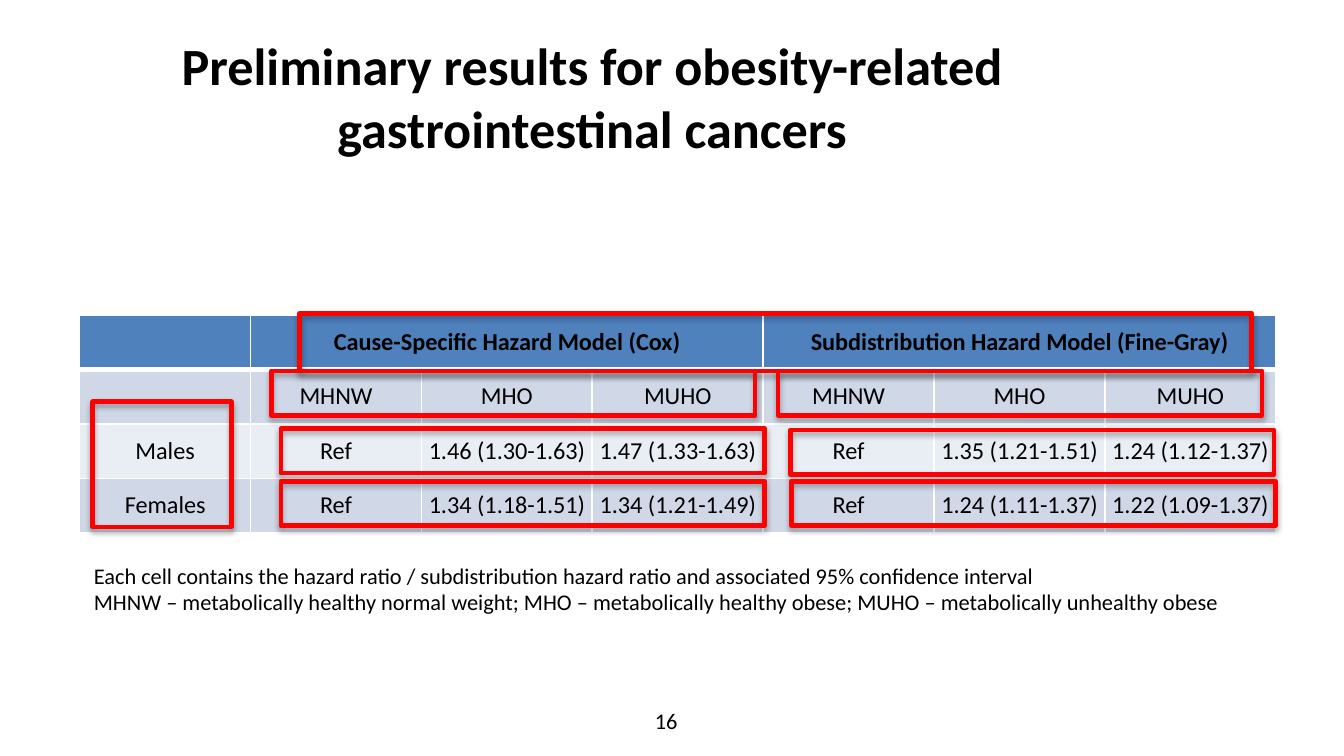
from lxml.etree import SubElement as Sub
from pptx import Presentation
from pptx.dml.color import RGBColor
from pptx.enum.shapes import MSO_SHAPE as Shape
from pptx.enum.text import MSO_ANCHOR as Anchor, MSO_AUTO_SIZE as Auto, PP_ALIGN as Align
from pptx.oxml.ns import qn
from pptx.util import Pt

HEAD = ["", "Cause-Specific Hazard Model (Cox)", "", "",
        "Subdistribution Hazard Model (Fine-Gray)", "", ""]
ROWS = [
    HEAD,
    [""] + ["MHNW", "MHO", "MUHO"] * 2,
    ["Males", "Ref", "1.46 (1.30-1.63)", "1.47 (1.33-1.63)",
     "Ref", "1.35 (1.21-1.51)", "1.24 (1.12-1.37)"],
    ["Females", "Ref", "1.34 (1.18-1.51)", "1.34 (1.21-1.49)",
     "Ref", "1.24 (1.11-1.37)", "1.22 (1.09-1.37)"],
]
FILLS = ["4F81BD", "D0D8E8", "E9EDF4", "D0D8E8"]
NOTES = [
    "Each cell contains the hazard ratio / subdistribution hazard ratio "
    "and associated 95% confidence interval",
    "MHNW – metabolically healthy normal weight; MHO – metabolically healthy obese; "
    "MUHO – metabolically unhealthy obese",
]
WIDE, HIGH = 259.2, 23.8
MARKS = [(160.6, 167.8, 509.8, 31), (49.7, 215.3, 74.2, 67)] + [
    (x, y, WIDE, HIGH) for x, y in [
        (145.4, 198.7), (416.9, 198.7),
        (150.5, 229.7), (423.4, 230.4),
        (150.5, 257.8), (424.1, 257.8),
    ]
]


def color(code):
    return RGBColor.from_string(code)


class Deck:
    font = "Calibri"
    ink = "000000"
    rule = "FFFFFF"
    mark = "FF0000"

    def __init__(self, wide, high):
        self.prs = Presentation()
        self.prs.slide_width, self.prs.slide_height = Pt(wide), Pt(high)
        self.slide = self.prs.slides.add_slide(self.prs.slide_layouts[0])
        sub = self.slide.placeholders[1].element
        sub.getparent().remove(sub)

    def put(self, frame, lines, size, align, bold=False):
        for i, line in enumerate(lines):
            para = frame.add_paragraph() if i else frame.paragraphs[0]
            para.alignment = align
            run = para.add_run()
            run.text = line
            font = run.font
            font.name, font.size, font.bold = self.font, Pt(size), bold
            font.color.rgb = color(self.ink)

    def title(self, text, x, y, w, h):
        box = self.slide.shapes.title
        box.left, box.top, box.width, box.height = map(Pt, (x, y, w, h))
        frame = box.text_frame
        frame.auto_size = Auto.NONE
        frame.vertical_anchor = Anchor.MIDDLE
        self.put(frame, [text], 28, Align.CENTER, True)

    def text(self, lines, x, y, w, h, align=Align.LEFT, anchor=Anchor.TOP):
        frame = self.slide.shapes.add_textbox(*map(Pt, (x, y, w, h))).text_frame
        frame.word_wrap = True
        frame.vertical_anchor = anchor
        self.put(frame, lines, 12, align)

    def edge(self, cell, top, base):
        props = cell._tc.get_or_add_tcPr()
        for side, width in zip("LRTB", (1, 1, top, base)):
            line = Sub(props, qn("a:ln" + side), w=str(Pt(width)))
            Sub(Sub(line, qn("a:solidFill")), qn("a:srgbClr"), val=self.rule)

    def table(self, rows, fills, x, y, w, h):
        grid = self.slide.shapes.add_table(
            len(rows), len(rows[0]), *map(Pt, (x, y, w, h))).table
        for r, (row, fill) in enumerate(zip(rows, fills)):
            for c, word in enumerate(row):
                cell = grid.cell(r, c)
                self.edge(cell, 3 if r == 1 else 1, 3 if r == 0 else 1)
                cell.fill.solid()
                cell.fill.fore_color.rgb = color(fill)
                cell.margin_left = cell.margin_right = 0
                cell.margin_top = cell.margin_bottom = 0
                cell.vertical_anchor = Anchor.MIDDLE
                if word:
                    self.put(cell.text_frame, [word], 13, Align.CENTER, r == 0)
        for c in (1, 4):
            grid.cell(0, c).merge(grid.cell(0, c + 2))

    def frame(self, x, y, w, h):
        box = self.slide.shapes.add_shape(Shape.RECTANGLE, *map(Pt, (x, y, w, h)))
        box.fill.background()
        box.line.color.rgb = color(self.mark)
        box.line.width = Pt(2.5)
        box.shadow.inherit = False
        glow = box._element.spPr.find(qn("a:effectLst"))
        shade = Sub(glow, qn("a:outerShdw"), blurRad=str(Pt(3.1)),
                    dist=str(Pt(1.8)), dir="5400000", rotWithShape="0")
        tint = Sub(shade, qn("a:srgbClr"), val=self.ink)
        Sub(tint, qn("a:alpha"), val="35000")


def main():
    deck = Deck(720, 405)
    deck.title("Preliminary results for obesity-related gastrointestinal cancers",
               54, 8, 526.3, 87)
    deck.text(["16"], 273, 375, 167.8, 21.6, Align.CENTER, Anchor.MIDDLE)
    deck.table(ROWS, FILLS, 42.7, 168.7, 640.8, 116.8)
    deck.text(NOTES, 43.2, 297.4, 640.8, 36)
    for spot in MARKS:
        deck.frame(*spot)
    deck.prs.save("out.pptx")


if __name__ == "__main__":
    main()
